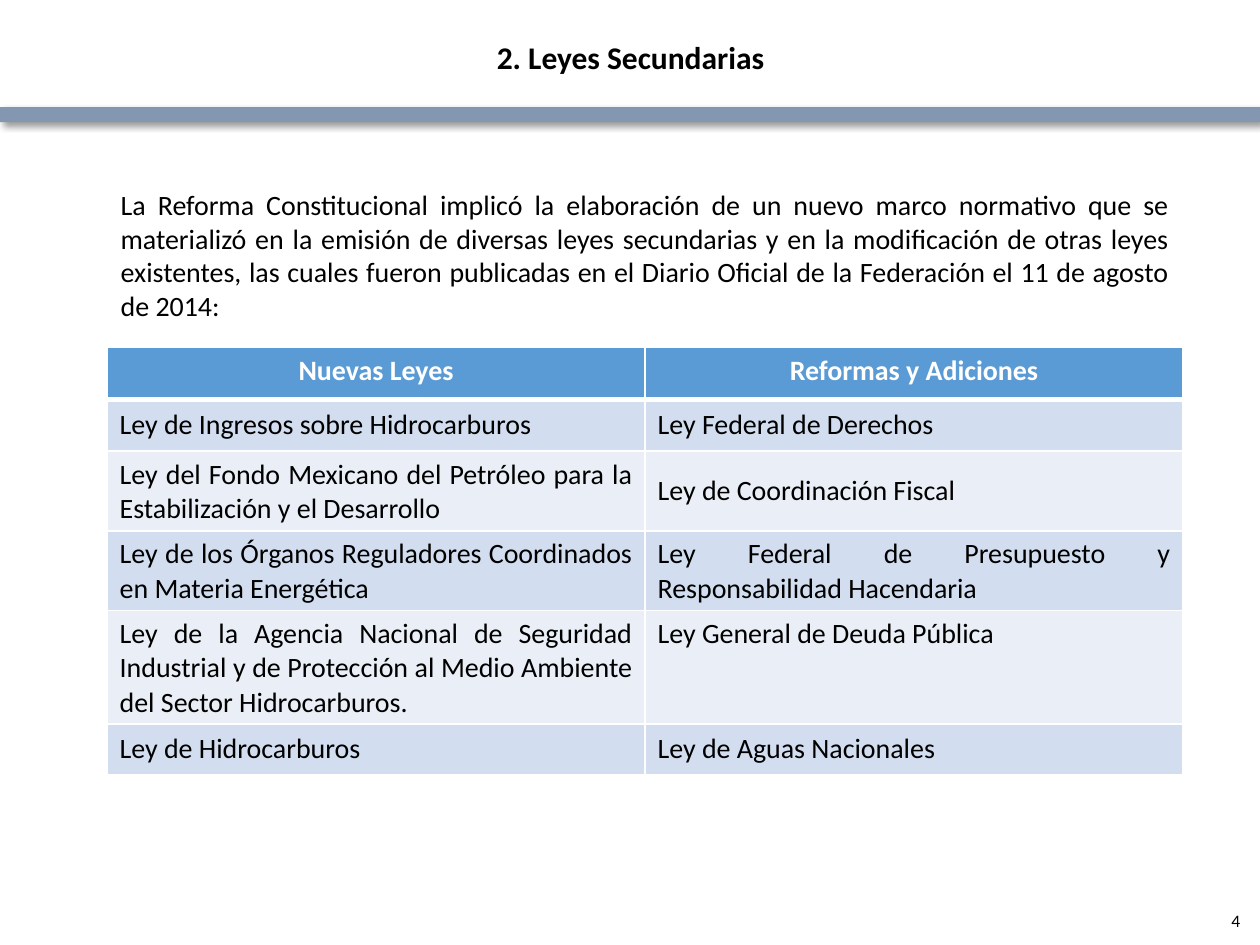
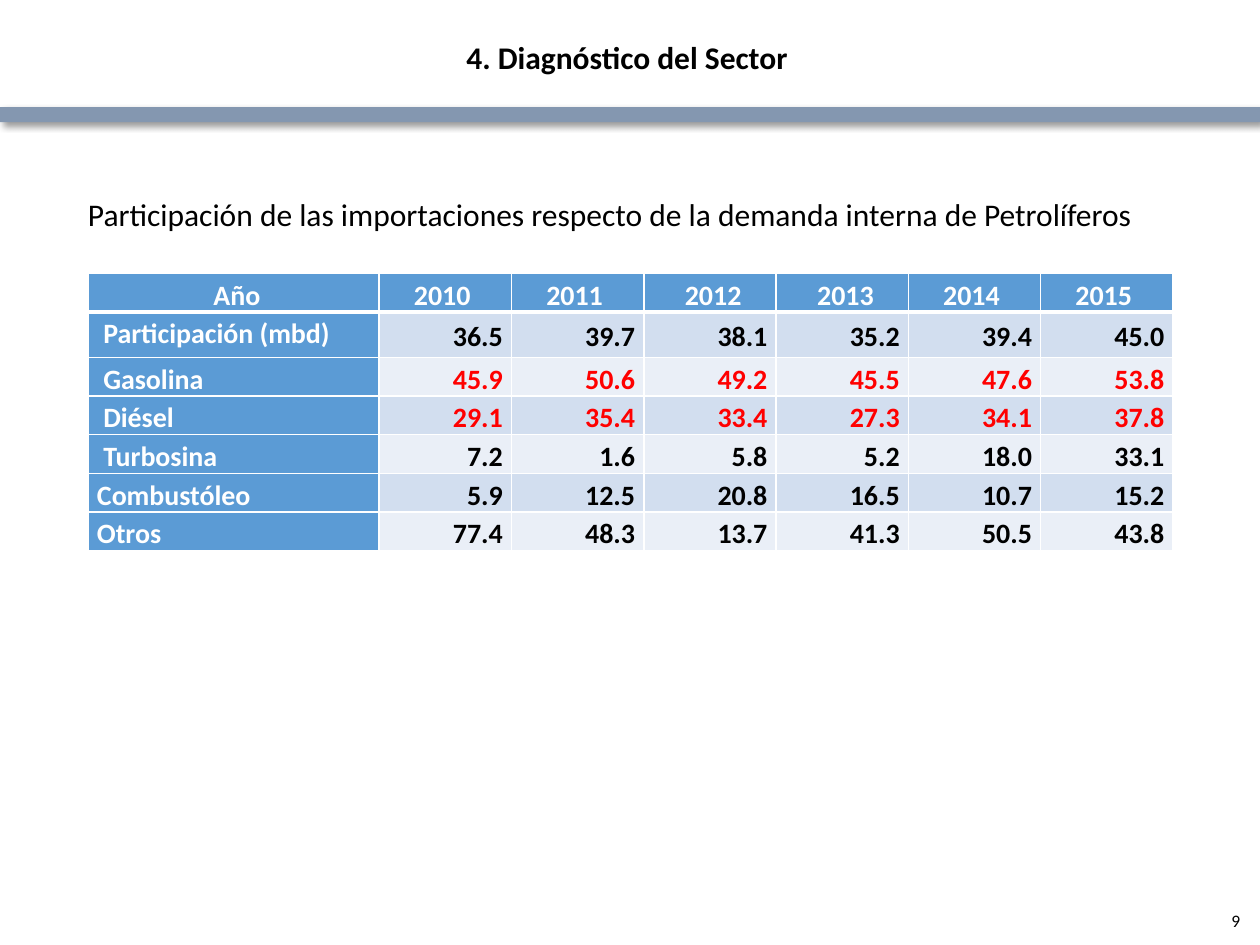
from dataclasses import dataclass

from lxml.etree import SubElement
from pptx import Presentation
from pptx.dml.color import RGBColor as RGB
from pptx.enum.shapes import MSO_SHAPE as Shape
from pptx.enum.text import MSO_ANCHOR as Anchor, PP_ALIGN as Align
from pptx.oxml import parse_xml
from pptx.oxml.ns import nsdecls, qn
from pptx.util import Inches, Pt


@dataclass(frozen=True)
class Theme:
    face: str = "Calibri"
    ink: str = "000000"
    paper: str = "FFFFFF"
    band: str = "8497B0"
    header: str = "5B9BD5"
    stripes: tuple = ("D2DEEF", "EAEFF7")
    alert: str = "FF0000"
    title: int = 18
    body: int = 16
    number: int = 10
    rule: int = 1
    header_rule: int = 3


THEME = Theme()

LAWS = {
    "title": "2. Leyes Secundarias",
    "number": "4",
    "intro": "La Reforma Constitucional implicó la elaboración de un nuevo marco "
             "normativo que se materializó en la emisión de diversas leyes secundarias "
             "y en la modificación de otras leyes existentes, las cuales fueron "
             "publicadas en el Diario Oficial de la Federación el 11 de agosto de 2014:",
    "rows": [
        ("Nuevas Leyes", "Reformas y Adiciones"),
        ("Ley de Ingresos sobre Hidrocarburos", "Ley Federal de Derechos"),
        ("Ley del Fondo Mexicano del Petróleo para la Estabilización y el Desarrollo",
         "Ley de Coordinación Fiscal"),
        ("Ley de los Órganos Reguladores Coordinados en Materia Energética",
         "Ley Federal de Presupuesto y Responsabilidad Hacendaria"),
        ("Ley de la Agencia Nacional de Seguridad Industrial y de Protección al Medio "
         "Ambiente del Sector Hidrocarburos.", "Ley General de Deuda Pública"),
        ("Ley de Hidrocarburos", "Ley de Aguas Nacionales"),
    ],
    "heights": [0.41, 0.41, 0.63, 0.63, 0.9, 0.4],
    "top_aligned": "Ley General de Deuda Pública",
}

IMPORTS = {
    "title": "4. Diagnóstico del Sector ",
    "number": "9",
    "intro": "Participación de las importaciones respecto de la demanda interna "
             "de Petrolíferos",
    "rows": [
        ("Año", "2010", "2011", "2012", "2013", "2014", "2015"),
        ("Participación (mbd)", "36.5", "39.7", "38.1", "35.2", "39.4", "45.0"),
        ("Gasolina", "45.9", "50.6", "49.2", "45.5", "47.6", "53.8"),
        ("Diésel", "29.1", "35.4", "33.4", "27.3", "34.1", "37.8"),
        ("Turbosina", "7.2", "1.6", "5.8", "5.2", "18.0", "33.1"),
        ("Combustóleo", "5.9", "12.5", "20.8", "16.5", "10.7", "15.2"),
        ("Otros", "77.4", "48.3", "13.7", "41.3", "50.5", "43.8"),
    ],
    "heights": [0.3, 0.36] + [0.3] * 5,
    "highlighted": ("Gasolina", "Diésel"),
    "nudged_right": ("Año", "2012", "2013", "Participación (mbd)", "Gasolina",
                     "Diésel", "Turbosina"),
    "nudged_left": ("2010", "2011", "2014", "2015"),
}

CELL_INSET = 0.07
NUDGE = 0.05


def apply(target, formats):
    for name, value in formats.items():
        setattr(target, name, value)


def write(frame, text, size, align, color=THEME.ink, bold=False, spacing=None):
    paragraph = frame.paragraphs[0]
    apply(paragraph, {"alignment": align, "line_spacing": spacing})
    run = paragraph.add_run()
    run.text = text
    apply(run.font, {"name": THEME.face, "size": Pt(size), "bold": bold})
    run.font.color.rgb = RGB.from_string(color)


def add_text(slide, box, text, size, align, anchor=Anchor.TOP, bold=False):
    frame = slide.shapes.add_textbox(*map(Inches, box)).text_frame
    apply(frame, {"word_wrap": True, "vertical_anchor": anchor})
    write(frame, text, size, align, bold=bold)


def add_band(slide):
    band = slide.shapes.add_shape(Shape.RECTANGLE, *map(Inches, (0, 0.85, 10, 0.12)))
    band.fill.solid()
    band.fill.fore_color.rgb = RGB.from_string(THEME.band)
    band.line.fill.background()
    band._element.spPr.append(parse_xml(
        f'<a:effectLst {nsdecls("a")}><a:outerShdw blurRad="{Pt(4)}" dist="{Pt(3)}" '
        f'dir="2700000" algn="tl" rotWithShape="0"><a:srgbClr val="{THEME.ink}">'
        '<a:alpha val="40000"/></a:srgbClr></a:outerShdw></a:effectLst>'))


def start_slide(deck, content):
    slide = deck.slides.add_slide(deck.slide_layouts[6])
    add_text(slide, (7.69, 7.11, 2.25, 0.4), content["number"], THEME.number,
             Align.RIGHT, Anchor.MIDDLE)
    add_band(slide)
    add_text(slide, (1.11, 0.25, 7.79, 0.4), content["title"], THEME.title,
             Align.CENTER, bold=True)
    return slide


def add_borders(cell, row):
    widths = {"lnL": THEME.rule, "lnR": THEME.rule,
              "lnT": THEME.header_rule if row == 1 else THEME.rule,
              "lnB": THEME.header_rule if row == 0 else THEME.rule}
    for side, width in widths.items():
        line = SubElement(cell._tc.get_or_add_tcPr(), qn(f"a:{side}"), w=str(Pt(width)))
        fill = SubElement(line, qn("a:solidFill"))
        SubElement(fill, qn("a:srgbClr"), val=THEME.paper)


def add_grid(slide, left, top, widths, content, style_cell):
    rows, heights = content["rows"], content["heights"]
    grid = slide.shapes.add_table(
        len(rows), len(widths),
        *map(Inches, (left, top, sum(widths), sum(heights)))).table
    for column, width in zip(grid.columns, widths):
        column.width = Inches(width)
    for r, (values, height) in enumerate(zip(rows, heights)):
        grid.rows[r].height = Inches(height)
        for c, value in enumerate(values):
            cell = grid.cell(r, c)
            add_borders(cell, r)
            cell_format, text_format, fill = style_cell(r, c, value)
            apply(cell, cell_format)
            cell.fill.solid()
            cell.fill.fore_color.rgb = RGB.from_string(fill)
            write(cell.text_frame, value, THEME.body, **text_format)


def style_law(row, column, law):
    if row == 0:
        return ({"vertical_anchor": Anchor.TOP},
                {"align": Align.CENTER, "color": THEME.paper, "bold": True},
                THEME.header)
    anchor = Anchor.TOP if law == LAWS["top_aligned"] else Anchor.MIDDLE
    return {"vertical_anchor": anchor}, {"align": Align.JUSTIFY}, THEME.stripes[(row - 1) % 2]


def style_import(row, column, value):
    heading = row == 0 or column == 0
    product = IMPORTS["rows"][row][0]
    if heading:
        color, fill = THEME.paper, THEME.header
        align = Align.CENTER if row == 0 else Align.LEFT
    else:
        color = THEME.alert if product in IMPORTS["highlighted"] else THEME.ink
        fill, align = THEME.stripes[(row - 1) % 2], Align.RIGHT
    cell_format = {
        "vertical_anchor": Anchor.TOP if heading else Anchor.MIDDLE,
        "margin_left": Inches(CELL_INSET + NUDGE * (value in IMPORTS["nudged_right"])),
        "margin_right": Inches(CELL_INSET + NUDGE * (value in IMPORTS["nudged_left"])),
        "margin_top": 0,
        "margin_bottom": 0,
    }
    return cell_format, {"align": align, "color": color, "bold": True, "spacing": 1.15}, fill


def main():
    deck = Presentation()
    apply(deck, {"slide_width": Inches(10), "slide_height": Inches(7.5)})

    laws = start_slide(deck, LAWS)
    add_text(laws, (0.86, 1.44, 8.52, 1.18), LAWS["intro"], THEME.body, Align.JUSTIFY)
    add_grid(laws, 0.85, 2.76, [4.27] * 2, LAWS, style_law)

    imports = start_slide(deck, IMPORTS)
    add_text(imports, (0.6, 1.5, 8.8, 0.4), IMPORTS["intro"], THEME.title, Align.JUSTIFY)
    add_grid(imports, 0.7, 2.17, [2.31] + [1.05] * 6, IMPORTS, style_import)

    deck.save("out.pptx")


if __name__ == "__main__":
    main()
